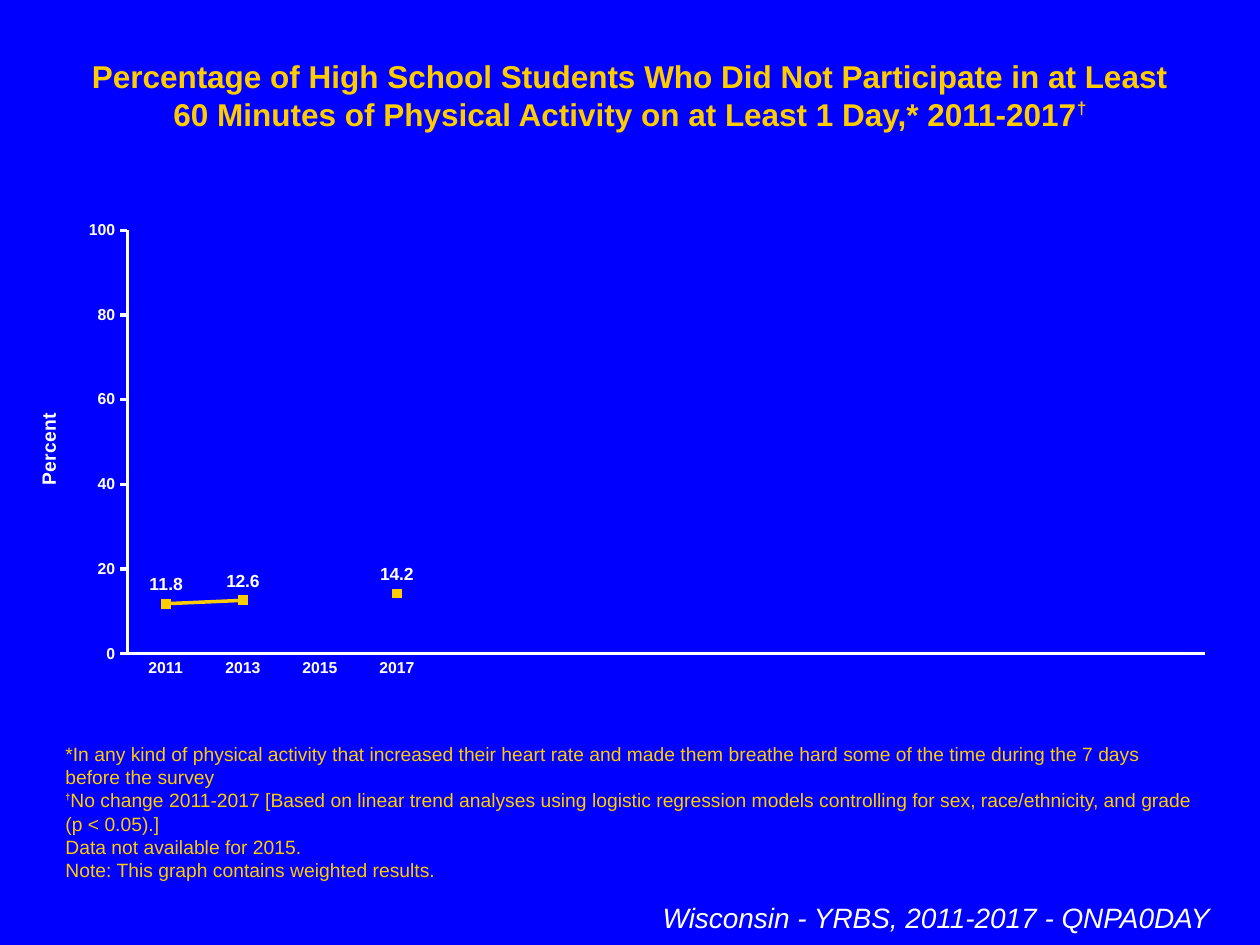
"""Build the slide on physical inactivity among high school students."""
from dataclasses import dataclass

from lxml.etree import SubElement
from pptx import Presentation
from pptx.chart.data import CategoryChartData
from pptx.dml.color import RGBColor
from pptx.enum.chart import XL_CHART_TYPE as ChartType
from pptx.enum.chart import XL_LABEL_POSITION as LabelPosition
from pptx.enum.chart import XL_MARKER_STYLE as Marker
from pptx.enum.chart import XL_TICK_MARK as Tick
from pptx.enum.text import MSO_ANCHOR as Anchor
from pptx.enum.text import MSO_AUTO_SIZE as AutoSize
from pptx.enum.text import PP_ALIGN as Align
from pptx.oxml.ns import qn
from pptx.util import Cm, Pt

FONT = "Arial"
COLORS = {"background": "0000FF", "accent": "FFCC00", "light": "FFFFFF"}
SLOTS = 14
RATES = {"2011": 11.8, "2013": 12.6, "2015": None, "2017": 14.2}
PLOT_AREA = {"x": 0.08, "y": 0.04, "w": 0.9, "h": 0.84}


@dataclass(frozen=True)
class Span:
    text: str
    size: float
    bold: bool = False
    italic: bool = False
    raised: int = 0


@dataclass(frozen=True)
class TextBlock:
    left: float
    top: float
    width: float
    height: float
    paragraphs: tuple
    color: str = "accent"
    align: Align = Align.LEFT
    anchor: Anchor = Anchor.TOP


BLOCKS = (
    TextBlock(1.27, 1.02, 22.86, 1.02, ((
        Span("Percentage of High School Students Who Did Not Participate in at Least "
             "60 Minutes of Physical Activity on at Least 1 Day,* 2011-2017", 18, bold=True),
        Span("†", 17, bold=True, raised=40),
    ),), align=Align.CENTER),
    TextBlock(1.07, 17.15, 23.29, 0.74, (
        (Span("*In any kind of physical activity that increased their heart rate and made "
              "them breathe hard some of the time during the 7 days before the survey", 11),),
        (Span("†", 9, bold=True, raised=50),
         Span("No change 2011-2017 [Based on linear trend analyses using logistic regression "
              "models controlling for sex, race/ethnicity, and grade (p < 0.05).]", 11)),
        (Span("Data not available for 2015.", 11),),
        (Span("Note: This graph contains weighted results.", 11),),
    ), anchor=Anchor.BOTTOM),
    TextBlock(1.07, 18.03, 23.57, 0.94, (
        (Span("Wisconsin - YRBS, 2011-2017 - QNPA0DAY", 16, italic=True),),
    ), color="light", align=Align.RIGHT),
)


def rgb(name: str) -> RGBColor:
    """Return a named colour."""
    return RGBColor.from_string(COLORS[name])


def style_font(font, size: float, color: str = "light", bold: bool = False) -> None:
    """Apply the common typeface with a size, colour and weight."""
    font.name, font.size, font.bold = FONT, Pt(size), bold
    font.color.rgb = rgb(color)


def draw_text(slide, block: TextBlock) -> None:
    """Draw one text block."""
    place = [Cm(v) for v in (block.left, block.top, block.width, block.height)]
    frame = slide.shapes.add_textbox(*place).text_frame
    frame.word_wrap = True
    frame.auto_size = AutoSize.SHAPE_TO_FIT_TEXT
    frame.vertical_anchor = block.anchor
    for index, spans in enumerate(block.paragraphs):
        paragraph = frame.add_paragraph() if index else frame.paragraphs[0]
        paragraph.alignment = block.align
        for span in spans:
            run = paragraph.add_run()
            run.text = span.text
            style_font(run.font, span.size, block.color, span.bold)
            run.font.italic = span.italic
            if span.raised:
                run.font._element.set("baseline", str(span.raised * 1000))


def style_axis(axis, tick: Tick) -> None:
    """Give an axis a white line, bold labels and no gridlines."""
    axis.has_major_gridlines = False
    axis.major_tick_mark, axis.minor_tick_mark = tick, Tick.NONE
    axis.format.line.color.rgb = rgb("light")
    axis.format.line.width = Pt(2)
    style_font(axis.tick_labels.font, 9, bold=True)


def fix_plot_area(chart) -> None:
    """Set the inner plot area as fractions of the chart."""
    plot_area = chart._chartSpace.chart.plotArea
    for old in plot_area.findall(qn("c:layout")):
        plot_area.remove(old)
    layout = SubElement(plot_area, qn("c:layout"))
    plot_area.insert(0, layout)
    manual = SubElement(layout, qn("c:manualLayout"))
    settings = {"layoutTarget": "inner", "xMode": "edge", "yMode": "edge", **PLOT_AREA}
    for tag, value in settings.items():
        SubElement(manual, qn(f"c:{tag}")).set("val", str(value))


def draw_trend(slide) -> None:
    """Draw the line chart of yearly percentages."""
    blanks = SLOTS - len(RATES)
    data = CategoryChartData(number_format="#,##0.0")
    data.categories = [*RATES, *[""] * blanks]
    data.add_series("Series 1", [*RATES.values(), *[None] * blanks])
    chart = slide.shapes.add_chart(
        ChartType.LINE_MARKERS, Cm(0.64), Cm(4.24), Cm(24.13), Cm(10.16), data).chart
    chart.has_legend = chart.has_title = False
    style_font(chart.font, 18)
    fix_plot_area(chart)

    style_axis(chart.category_axis, Tick.NONE)
    percent = chart.value_axis
    style_axis(percent, Tick.OUTSIDE)
    percent.minimum_scale, percent.maximum_scale, percent.major_unit = 0, 100, 20
    percent.tick_labels.number_format = "#,##0"
    percent.tick_labels.number_format_is_linked = False
    caption = percent.axis_title.text_frame
    caption.text = "Percent"
    style_font(caption.paragraphs[0].runs[0].font, 11, bold=True)

    plot = chart.plots[0]
    plot.vary_by_categories = False
    trend = plot.series[0]
    trend.smooth = False
    trend.format.line.color.rgb = rgb("accent")
    trend.format.line.width = Pt(2)
    trend.marker.style, trend.marker.size = Marker.SQUARE, 5
    trend.marker.format.fill.solid()
    trend.marker.format.fill.fore_color.rgb = rgb("accent")
    trend.marker.format.line.color.rgb = rgb("accent")
    labels = trend.data_labels
    labels.show_value = True
    labels.position = LabelPosition.ABOVE
    labels.number_format, labels.number_format_is_linked = "#,##0.0", False
    style_font(labels.font, 10, bold=True)


def main() -> None:
    """Assemble and save the slide."""
    deck = Presentation()
    deck.slide_width, deck.slide_height = Cm(25.4), Cm(19.05)
    slide = deck.slides.add_slide(deck.slide_layouts[6])
    slide.background.fill.solid()
    slide.background.fill.fore_color.rgb = rgb("background")
    for block in BLOCKS:
        draw_text(slide, block)
    draw_trend(slide)
    deck.save("out.pptx")


if __name__ == "__main__":
    main()
